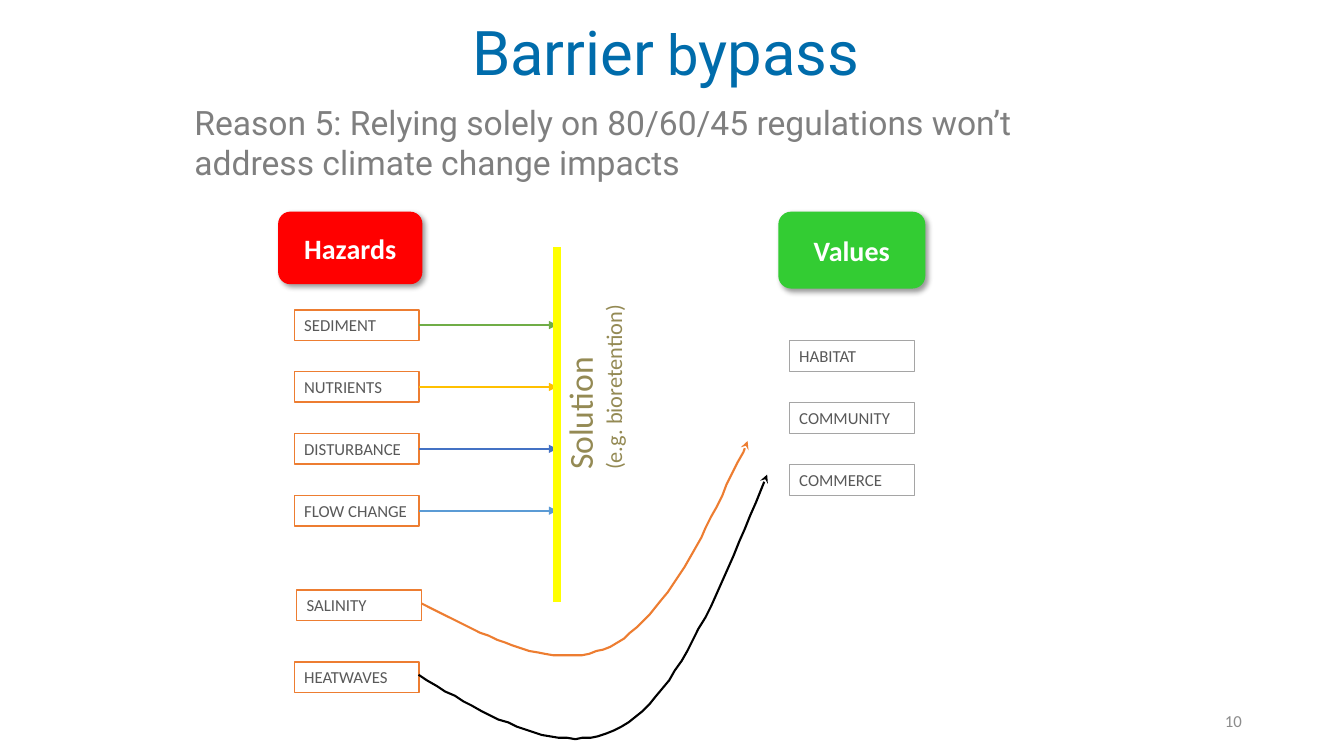
"""Build the barrier bypass slide."""
import pptx
import pptx.util
import pptx.oxml
import pptx.oxml.ns
import pptx.dml.color
import pptx.enum.text
import pptx.enum.shapes

Pt = pptx.util.Pt
RGB = pptx.dml.color.RGBColor
ALIGN = pptx.enum.text.PP_ALIGN
ANCHOR = pptx.enum.text.MSO_ANCHOR
SHAPE = pptx.enum.shapes.MSO_SHAPE
NS = pptx.oxml.ns.nsdecls("a")

WHITE = RGB(0xFF, 0xFF, 0xFF)
BLACK = RGB(0, 0, 0)
TITLE = RGB(0x00, 0x6C, 0xAB)
SLATE = RGB(0x76, 0x71, 0x71)
GREY = RGB(0x7F, 0x7F, 0x7F)
PALE = RGB(0x8C, 0x8C, 0x8C)
LABEL = RGB(0x59, 0x59, 0x59)
OLIVE = RGB(0x94, 0x8A, 0x54)
RED = RGB(0xFF, 0x00, 0x00)
LIME = RGB(0x33, 0xCC, 0x33)
YELLOW = RGB(0xFF, 0xFF, 0x00)
ORANGE = RGB(0xED, 0x7D, 0x31)
SILVER = RGB(0xA5, 0xA5, 0xA5)
GREEN = RGB(0x70, 0xAD, 0x47)
GOLD = RGB(0xFF, 0xC0, 0x00)
BLUE = RGB(0x44, 0x72, 0xC4)
SKY = RGB(0x5B, 0x9B, 0xD5)


def write(para, text, size=12, color=LABEL, font="Calibri", bold=False):
    run = para.add_run()
    run.text = text
    run.font.size = Pt(size)
    run.font.name = font
    run.font.bold = bold
    run.font.color.rgb = color


def curve(start, bends, steps=24):
    points = [start]
    for bend in bends:
        ctrl = (points[-1], *bend)
        for step in range(1, steps + 1):
            t = step / steps
            mix = ((1 - t) ** 3, 3 * t * (1 - t) ** 2, 3 * t * t * (1 - t), t ** 3)
            points.append(tuple(sum(m * p[axis] for m, p in zip(mix, ctrl))
                                for axis in (0, 1)))
    return points


class Board:
    def __init__(self, slide, font="Calibri"):
        self.shapes = slide.shapes
        self.font = font

    def text(self, x, y, w, h, lines, align=ALIGN.LEFT, anchor=ANCHOR.TOP,
             space=None, turn=0):
        box = self.shapes.add_textbox(Pt(x), Pt(y), Pt(w), Pt(h))
        box.rotation = turn
        frame = box.text_frame
        frame.word_wrap = True
        frame.vertical_anchor = anchor
        for i, runs in enumerate(lines):
            para = frame.add_paragraph() if i else frame.paragraphs[0]
            para.alignment = align
            para.line_spacing = space
            for words, style in runs:
                write(para, words, **{"font": self.font, **style})

    def block(self, kind, x, y, w, h, fill, align, anchor, words, **style):
        shape = self.shapes.add_shape(kind, Pt(x), Pt(y), Pt(w), Pt(h))
        shape.shadow.inherit = False
        shape.fill.solid()
        shape.fill.fore_color.rgb = fill
        shape.line.fill.background()
        frame = shape.text_frame
        frame.word_wrap = True
        frame.vertical_anchor = anchor
        para = frame.paragraphs[0]
        para.alignment = align
        write(para, words, font=self.font, **style)
        return shape

    def label(self, x, y, words, edge):
        box = self.block(SHAPE.RECTANGLE, x, y, 89.3, 21.8, WHITE,
                         ALIGN.LEFT, ANCHOR.TOP, words)
        box.line.color.rgb = edge
        box.line.width = Pt(1)
        return box

    def head(self, x, y, w, h, words, fill):
        shape = self.block(SHAPE.ROUNDED_RECTANGLE, x, y, w, h, fill,
                           ALIGN.CENTER, ANCHOR.MIDDLE, words,
                           size=20, color=WHITE, bold=True)
        glow = shape._element.spPr.find(pptx.oxml.ns.qn("a:effectLst"))
        glow.append(pptx.oxml.parse_xml(
            f'<a:outerShdw {NS} blurRad="{Pt(4)}" dist="{Pt(3)}" dir="2700000" '
            'algn="tl" rotWithShape="0"><a:srgbClr val="000000">'
            '<a:alpha val="40000"/></a:srgbClr></a:outerShdw>'))

    def stroke(self, shape, color, width, tip=None):
        shape.line.color.rgb = color
        shape.line.width = Pt(width)
        if tip:
            shape.line._get_or_add_ln().append(
                pptx.oxml.parse_xml(f'<a:tailEnd {NS} type="{tip}"/>'))

    def line(self, x1, y1, x2, y2, color, width=1.5, tip=None, source=None):
        link = self.shapes.add_connector(
            pptx.enum.shapes.MSO_CONNECTOR.STRAIGHT, Pt(x1), Pt(y1), Pt(x2), Pt(y2))
        if source is not None:
            link.begin_connect(source, 3)
        self.stroke(link, color, width, tip)
        link._element.spPr.append(pptx.oxml.parse_xml(f"<a:effectLst {NS}/>"))

    def sweep(self, start, bends, color):
        points = curve(start, bends)
        pen = self.shapes.build_freeform(*points[0], scale=Pt(1))
        pen.add_line_segments(points[1:], close=False)
        shape = pen.convert_to_shape()
        shape.shadow.inherit = False
        shape.fill.background()
        self.stroke(shape, color, 1.5, "stealth")


def main():
    deck = pptx.Presentation()
    deck.slide_width, deck.slide_height = Pt(960), Pt(540)
    board = Board(deck.slides.add_slide(deck.slide_layouts[6]))

    blue = {"font": "Roboto", "color": TITLE}
    board.text(157, 5.8, 648, 67.7, [[
        ("Barrier", {"size": 44, **blue}), (" ", {"size": 40, "color": SLATE}),
        ("b", {"size": 40, **blue}), ("ypass ", {"size": 44, **blue})]],
        align=ALIGN.CENTER, anchor=ANCHOR.MIDDLE, space=0.9)
    board.text(131.8, 69.1, 609, 65.5, [[
        ("Reason 5: Relying solely on 80/60/45 regulations won’t address "
         "climate change impacts", {"size": 24, "font": "Roboto", "color": GREY})]])

    hazards = [("SEDIMENT", GREEN), ("NUTRIENTS", GOLD),
               ("DISTURBANCE", BLUE), ("FLOW CHANGE", SKY)]
    for i, (name, color) in enumerate(hazards):
        top = 221.3 + 44.2 * i
        box = board.label(210.2, top, name, ORANGE)
        mid = top + 10.9
        board.line(299.5, mid, 398, mid, color, tip="triangle", source=box)
    board.line(398, 176.4, 398, 430, YELLOW, width=6)

    for i, name in enumerate(["HABITAT", "COMMUNITY", "COMMERCE"]):
        board.label(563.8, 243.4 + 44.3 * i, name, SILVER)

    board.label(211.9, 421.3, "SALINITY", ORANGE)
    board.label(210.2, 473, "HEATWAVES", ORANGE)
    board.sweep((301, 431.3), [
        ((349.2, 455.8), (397.4, 481), (436.3, 461.5)),
        ((475.2, 442.1), (504.7, 378), (534.2, 314.6))], ORANGE)
    board.sweep((298.8, 482.4), [
        ((350.6, 512.6), (401.8, 542.9), (443.5, 519.1)),
        ((485.3, 495.4), (516.2, 416.9), (547.9, 339.1))], BLACK)

    board.text(324, 215.3, 199.4, 55.4, [
        [("Solution", {"size": 24, "color": OLIVE})],
        [("(e.g. bioretention)", {"size": 16, "color": OLIVE})]], turn=270)
    board.head(198.7, 151.2, 103, 51.8, "Hazards", RED)
    board.head(556, 151.2, 105, 54.9, "Values", LIME)
    board.text(678.2, 500.5, 216, 28.8, [[("10", {"color": PALE})]],
               align=ALIGN.RIGHT, anchor=ANCHOR.MIDDLE)
    deck.save("out.pptx")


if __name__ == "__main__":
    main()
